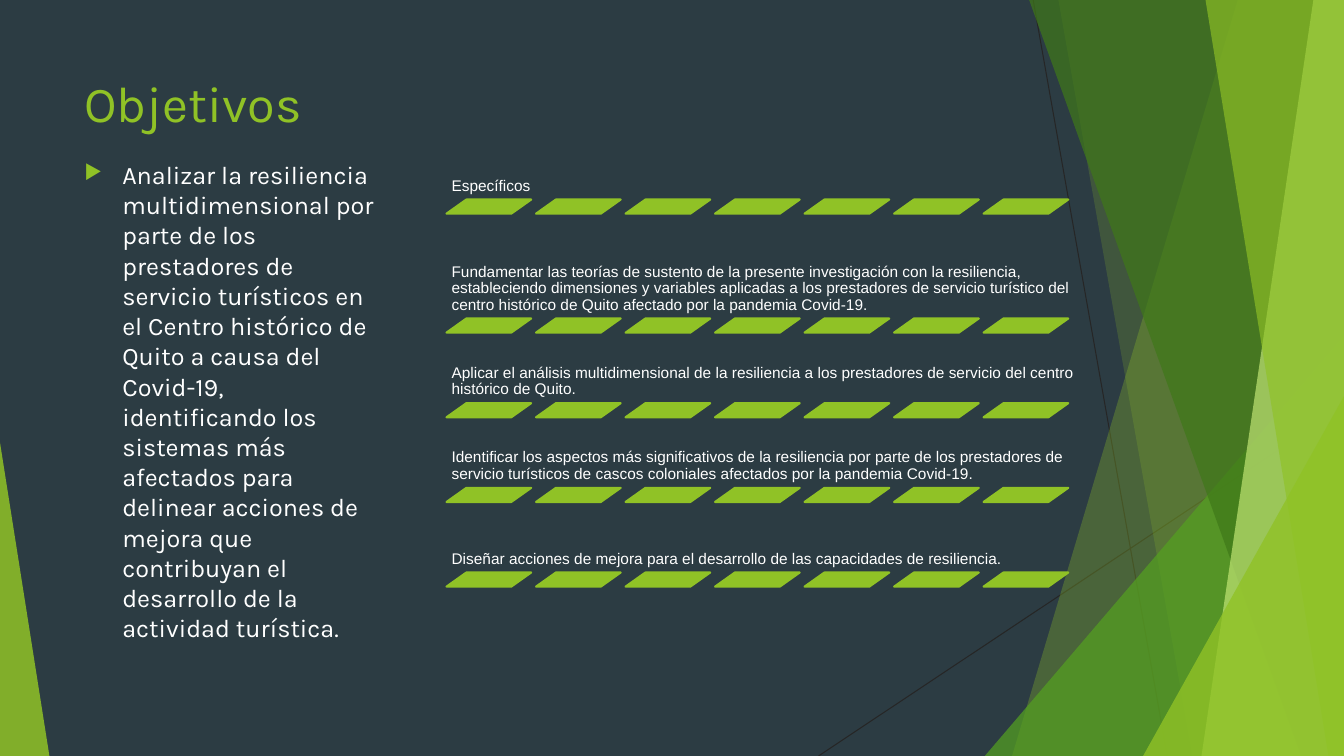
from dataclasses import dataclass

from lxml import etree
from pptx import Presentation, util as u
from pptx.dml.color import RGBColor
from pptx.enum import shapes, text
from pptx.oxml import ns


@dataclass(frozen=True)
class Theme:
    background: str = "2C3C43"
    green: str = "90C226"
    leaf: str = "54A021"
    forest: str = "3F7819"
    pale: str = "C0E474"
    thin: str = "262626"
    white: str = "FFFFFF"
    title_size: int = 36
    body_size: int = 18
    goal_size: int = 11
    heading_font: str = "Karla"
    goal_font: str = "Arial"


theme = Theme()
Pt = u.Pt
WIDTH, HEIGHT = 960, 540

deck = Presentation()
deck.slide_width, deck.slide_height = Pt(WIDTH), Pt(HEIGHT)
page = deck.slides.add_slide(deck.slide_layouts[6])
page.background.fill.solid()
page.background.fill.fore_color.rgb = RGBColor.from_string(theme.background)


def paint(shape, color, opacity=100):
    """Give a flat fill without outline or shadow; opacity is in percent."""
    shape.shadow.inherit = False
    shape.fill.solid()
    shape.fill.fore_color.rgb = RGBColor.from_string(color)
    shape.line.fill.background()
    if opacity < 100:
        solid = shape.fill._xPr.find(ns.qn("a:solidFill"))
        etree.SubElement(solid[0], ns.qn("a:alpha"), val=str(opacity * 1000))


def add_text(place, words, font, size, color, frame_format, para_format):
    """Add a wrapped text box with one paragraph and return that paragraph."""
    box = page.shapes.add_textbox(*map(Pt, place))
    para = box.text_frame.paragraphs[0]
    span = para.add_run()
    span.text = words
    span_format = {"name": font, "size": Pt(size)}
    for target, values in (
        (box.text_frame, {"word_wrap": True, **frame_format}),
        (para, para_format),
        (span.font, span_format),
    ):
        for name, value in values.items():
            setattr(target, name, value)
    span.font.color.rgb = RGBColor.from_string(color)
    return para


# Thin lines behind the facets
for ends in ((738, 0, 833.76, HEIGHT), (WIDTH, 290.16, 584.64, HEIGHT)):
    line = page.shapes.add_connector(shapes.MSO_CONNECTOR.STRAIGHT, *map(Pt, ends))
    line.line.color.rgb = RGBColor.from_string(theme.thin)
    line.line.width = Pt(0.75)
    etree.SubElement(line._element.spPr, ns.qn("a:effectLst"))

# Facets: a band is (top x, bottom x) up to the right edge,
# a triangle is (left, top, width, height, apex position)
facets = [
    ((884.16, 722.88), theme.green, 30),
    ((756, 851.76), theme.green, 20),
    ((703.44, 239.76, 256.56, 300.24, 1), theme.leaf, 72),
    ((735.12, 929.52), theme.forest, 70),
    ((938.16, 858.24), theme.pale, 70),
    ((861.12, 948.96), theme.green, 65),
    ((816.48, 282.96, 143.52, 257.04, 1), theme.green, 80),
    ((0, 316.08, 35.28, 223.92, 0), theme.green, 85),
]
for geometry, color, opacity in facets:
    if len(geometry) == 2:
        top_x, bottom_x = geometry
        outline = page.shapes.build_freeform(Pt(top_x), 0)
        corners = ((WIDTH, 0), (WIDTH, HEIGHT), (bottom_x, HEIGHT))
        outline.add_line_segments([(Pt(x), Pt(y)) for x, y in corners], close=True)
        facet = outline.convert_to_shape()
    else:
        *place, apex = geometry
        facet = page.shapes.add_shape(
            shapes.MSO_SHAPE.ISOSCELES_TRIANGLE, *map(Pt, place)
        )
        facet.adjustments[0] = apex
    paint(facet, color, opacity)

# Title and general objective
add_text((53.28, 48.24, 676.8, 103.68), "Objetivos", theme.heading_font,
         theme.title_size, theme.green, {}, {})
general = add_text(
    (53.28, 110.16, 225.36, 370.08),
    "Analizar la resiliencia multidimensional por parte de los prestadores de "
    "servicio turísticos en el Centro histórico de Quito a causa del Covid-19, "
    "identificando los sistemas más afectados para delinear acciones de mejora "
    "que contribuyan el desarrollo de la actividad turística.",
    theme.heading_font, theme.body_size, theme.white, {}, {"space_before": Pt(10)},
)
props = general._p.get_or_add_pPr()
props.set("marL", str(Pt(27)))
props.set("indent", str(-Pt(27)))
bullet_color = etree.SubElement(props, ns.qn("a:buClr"))
etree.SubElement(bullet_color, ns.qn("a:srgbClr"), val=theme.green)
etree.SubElement(props, ns.qn("a:buSzPct"), val="80000")
etree.SubElement(props, ns.qn("a:buChar"), char="▶")

# Specific objectives, each above a row of slanted bars
goals = [
    ("Específicos", 41.04),
    ("Fundamentar las teorías de sustento de la presente investigación con la "
     "resiliencia, estableciendo dimensiones y variables aplicadas a los "
     "prestadores de servicio turístico del centro histórico de Quito afectado "
     "por la pandemia Covid-19.", 65.52),
    ("Aplicar el análisis multidimensional de la resiliencia a los prestadores "
     "de servicio del centro histórico de Quito.", 41.04),
    ("Identificar los aspectos más significativos de la resiliencia por parte de "
     "los prestadores de servicio turísticos de cascos coloniales afectados por "
     "la pandemia Covid-19.", 41.04),
    ("Diseñar acciones de mejora para el desarrollo de las capacidades de "
     "resiliencia.", 41.04),
]
goal_frame = {"vertical_anchor": text.MSO_ANCHOR.BOTTOM}
for side in ("left", "top", "right", "bottom"):
    goal_frame[f"margin_{side}"] = Pt(3.6)
goal_para = {"line_spacing": 0.9, "space_after": Pt(3.85)}
GOAL_LEFT, GOAL_WIDTH, ROW_STEP = 318.96, 452.88, 19.44
BAR_COUNT, BAR_STEP, BAR_WIDTH, BAR_HEIGHT = 7, 63.94, 60.48, 10.08

top = 101.52
for words, height in goals:
    add_text((GOAL_LEFT, top, GOAL_WIDTH, height), words, theme.goal_font,
             theme.goal_size, theme.white, goal_frame, goal_para)
    bar_top = top + height
    for column in range(BAR_COUNT):
        place = (GOAL_LEFT + column * BAR_STEP, bar_top, BAR_WIDTH, BAR_HEIGHT)
        bar = page.shapes.add_shape(shapes.MSO_SHAPE.PARALLELOGRAM, *map(Pt, place))
        bar.adjustments[0] = 1.41
        paint(bar, theme.green)
        bar.line.color.rgb = RGBColor.from_string(theme.green)
        bar.line.width = Pt(1.5)
    top = bar_top + ROW_STEP

deck.save("out.pptx")
